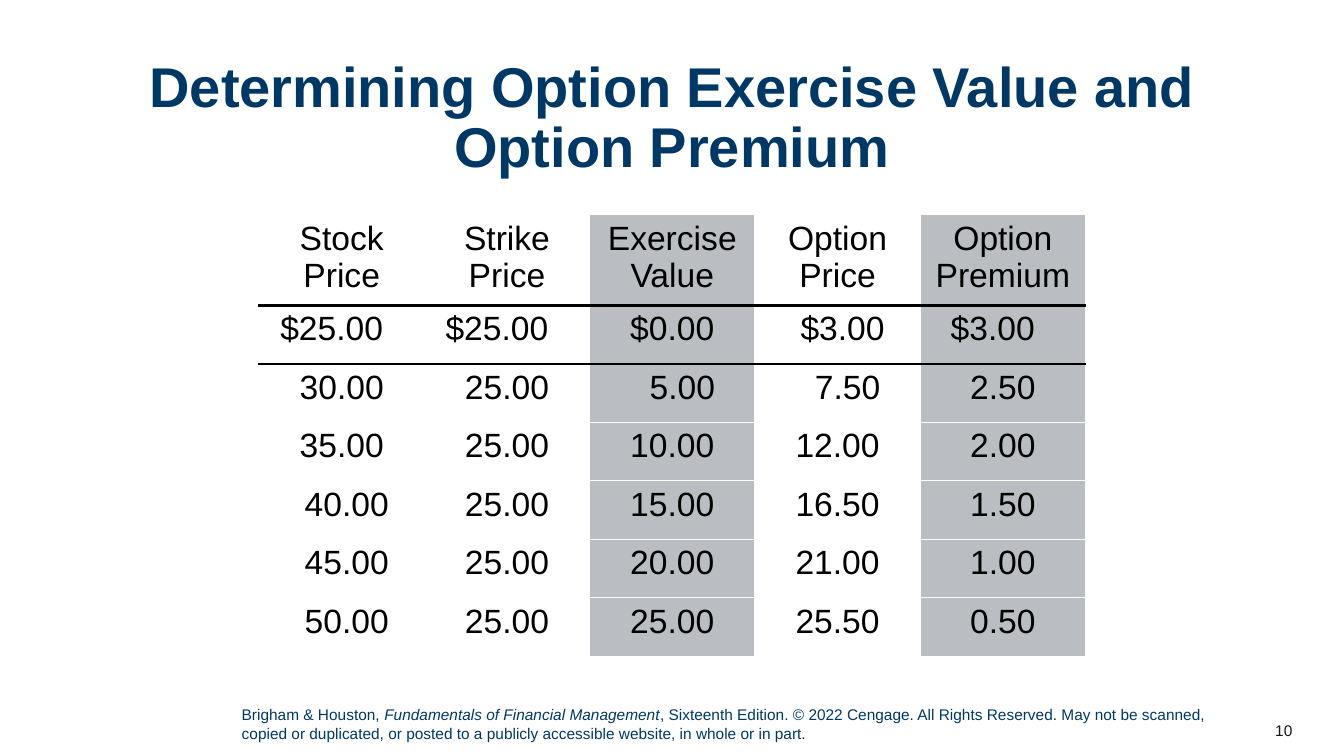
from lxml import etree
from pptx import Presentation
from pptx.dml.color import RGBColor
from pptx.enum.text import MSO_ANCHOR, PP_ALIGN
from pptx.oxml.ns import qn
from pptx.util import Pt

CENTER, LEFT, RIGHT = PP_ALIGN.CENTER, PP_ALIGN.LEFT, PP_ALIGN.RIGHT
TOP, MIDDLE = MSO_ANCHOR.TOP, MSO_ANCHOR.MIDDLE

COLORS = {
    "navy": "003865",
    "ink": "181717",
    "black": "000000",
    "white": "FFFFFF",
    "gray": "BABDC1",
}
TITLE = {"size": Pt(40), "bold": True}
FOOTNOTE = {"size": Pt(11)}
CITED_TITLE = {"size": Pt(11), "italic": True}
TABLE_TEXT = {"size": Pt(24)}

HEADERS = ["Stock Price", "Strike Price", "Exercise Value", "Option Price", "Option Premium"]
PRICES = [
    ["$25.00", "$25.00", "$0.00", "$3.00", "$3.00"],
    ["30.00", "25.00", "5.00", "7.50", "2.50"],
    ["35.00", "25.00", "10.00", "12.00", "2.00"],
    ["40.00", "25.00", "15.00", "16.50", "1.50"],
    ["45.00", "25.00", "20.00", "21.00", "1.00"],
    ["50.00", "25.00", "25.00", "25.50", "0.50"],
]
SHADED_COLUMNS = {2, 4}
COLUMN_WIDTH, HEADER_HEIGHT, PRICE_HEIGHT = 118.08, 59.04, 41.76
RULE_WIDTH = 2.25

# (row, column): left and right margins that line up the decimals
DEFAULT_MARGINS = (7.2, 7.2)
MARGINS = {
    (1, 0): (0, 14.4),
    (1, 1): (0, 14.4),
    (1, 2): (14.4, 14.4),
    (1, 3): (14.4, 7.2),
    (1, 4): (0, 14.4),
    (2, 2): (14.4, 0),
    (2, 3): (21.6, 7.2),
    (4, 0): (14.4, 7.2),
    (5, 0): (14.4, 7.2),
    (6, 0): (14.4, 7.2),
}


def rgb(color):
    return RGBColor.from_string(COLORS[color])


def add_run(paragraph, text, color, font_format):
    run = paragraph.add_run()
    run.text = text
    run.font.name = "Arial"
    run.font.color.rgb = rgb(color)
    for attribute, value in font_format.items():
        setattr(run.font, attribute, value)


def add_text(slide, box, runs, color, align=LEFT, anchor=TOP, line_spacing=1.0):
    """Add a one-paragraph text box; runs are (text, font format) pairs."""
    frame = slide.shapes.add_textbox(*map(Pt, box)).text_frame
    frame.word_wrap = True
    frame.vertical_anchor = anchor
    paragraph = frame.paragraphs[0]
    paragraph.alignment = align
    paragraph.line_spacing = line_spacing
    for text, font_format in runs:
        add_run(paragraph, text, color, font_format)


def add_border(cell, side):
    """Draw the header rule on one side of a cell: lnT or lnB."""
    line = etree.Element(qn(f"a:{side}"), w=str(Pt(RULE_WIDTH)))
    fill = etree.SubElement(line, qn("a:solidFill"))
    etree.SubElement(fill, qn("a:srgbClr"), val=COLORS["black"])
    cell._tc.get_or_add_tcPr().insert(0, line)


def fill_cell(cell, text, row, column):
    cell.fill.solid()
    cell.fill.fore_color.rgb = rgb("gray" if column in SHADED_COLUMNS else "white")
    left, right = MARGINS.get((row, column), DEFAULT_MARGINS)
    cell.margin_left, cell.margin_right = Pt(left), Pt(right)
    paragraph = cell.text_frame.paragraphs[0]
    paragraph.alignment = CENTER
    add_run(paragraph, text, "black", TABLE_TEXT)
    if row < 2:
        add_border(cell, ("lnB", "lnT")[row])


def add_price_table(slide, left, top):
    rows = [HEADERS, *PRICES]
    width = COLUMN_WIDTH * len(HEADERS)
    height = HEADER_HEIGHT + PRICE_HEIGHT * len(PRICES)
    table = slide.shapes.add_table(
        len(rows), len(HEADERS), Pt(left), Pt(top), Pt(width), Pt(height)
    ).table
    table.horz_banding = False
    for column in table.columns:
        column.width = Pt(COLUMN_WIDTH)
    for row, texts in enumerate(rows):
        table.rows[row].height = Pt(PRICE_HEIGHT if row else HEADER_HEIGHT)
        for column, text in enumerate(texts):
            fill_cell(table.cell(row, column), text, row, column)


def main():
    presentation = Presentation()
    presentation.slide_width, presentation.slide_height = Pt(960), Pt(540)
    slide = presentation.slides.add_slide(presentation.slide_layouts[6])

    add_text(slide, (37.44, 37.44, 884.88, 95.76),
             [("Determining Option Exercise Value and Option Premium", TITLE)],
             "navy", CENTER, MIDDLE, 0.9)
    add_price_table(slide, 185.04, 153.36)
    add_text(slide, (165.6, 500.4, 705.6, 33.84), [
        ("Brigham & Houston, ", FOOTNOTE),
        ("Fundamentals of Financial Management", CITED_TITLE),
        (", Sixteenth Edition. © 2022 Cengage. All Rights Reserved. May not be scanned, "
         "copied or duplicated, or posted to a publicly accessible website, "
         "in whole or in part.", FOOTNOTE),
    ], "navy")
    add_text(slide, (872.64, 507.6, 57.6, 28.8), [("10", FOOTNOTE)], "ink", RIGHT, MIDDLE)

    presentation.save("out.pptx")


if __name__ == "__main__":
    main()
